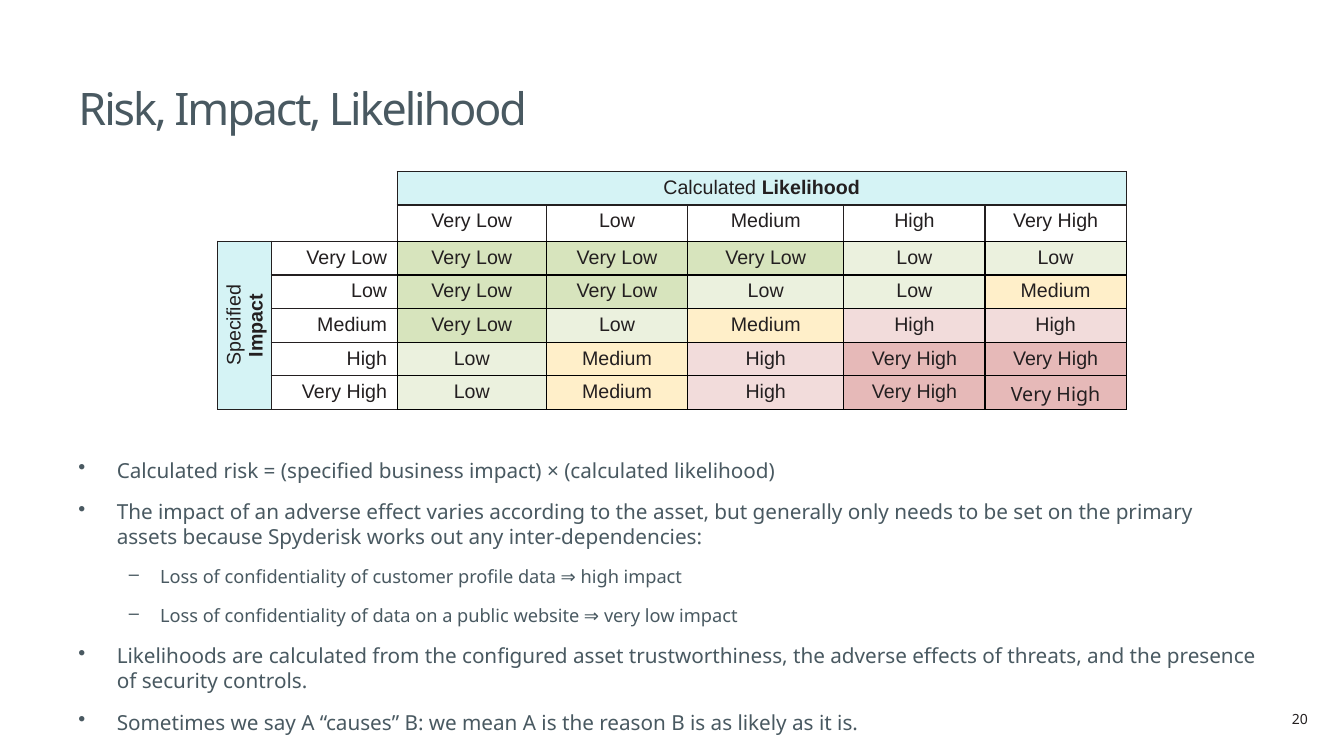
import pptx
import pptx.dml.color
import pptx.enum.text
import pptx.oxml.ns
import pptx.util
from lxml import etree

Inches = pptx.util.Inches
Pt = pptx.util.Pt
RGB = pptx.dml.color.RGBColor.from_string
ALIGN = pptx.enum.text.PP_ALIGN
ANCHOR = pptx.enum.text.MSO_ANCHOR
qn = pptx.oxml.ns.qn

THEME = {
    "sans": "Noto Sans", "grid": "Arial",
    "slate": "495961", "ink": "231F20", "line": "000000", "head": "D5F3F5",
    "risk": ["D7E4BD", "EBF1DE", "FFEFC9", "F2DCDB", "E6B9B8"],
    "title": 32, "main": 14.8, "sub": 13, "cell": 14, "page": 10,
}


def write(para, *texts, size, font=THEME["sans"], color=THEME["slate"],
          align=ALIGN.LEFT, track=0):
    """Fill a paragraph with runs; a (text,) tuple is bold."""
    para.alignment = align
    for text in texts:
        bold = isinstance(text, tuple)
        run = para.add_run()
        run.text = text[0] if bold else text
        run.font.size = Pt(size)
        run.font.name = font
        run.font.bold = bold
        run.font.color.rgb = RGB(color)
        if track:
            run.font._element.set("spc", str(track))


def edge(cell, sides, color):
    """Draw 1 pt borders on the given sides of a cell."""
    props = cell._tc.get_or_add_tcPr()
    for side in sides:
        line = etree.SubElement(props, qn("a:ln" + side), w=str(Pt(1)))
        fill = etree.SubElement(line, qn("a:solidFill"))
        etree.SubElement(fill, qn("a:srgbClr"), val=color)


deck = pptx.Presentation()
deck.slide_width = Inches(13.33)
deck.slide_height = Inches(7.5)
slide = deck.slides.add_slide(deck.slide_layouts[6])

# Title, body and page number frames
frames = {}
for name, box in {
    "title": (0.68, 0.7, 11.86, 0.63),
    "body": (0.68, 4.49, 11.88, 2.9),
    "page": (12.02, 7, 1.05, 0.27),
}.items():
    frame = slide.shapes.add_textbox(*map(Inches, box)).text_frame
    frame.word_wrap = True
    frames[name] = frame

title = frames["title"]
title.margin_top = title.margin_bottom = 0
title.vertical_anchor = ANCHOR.BOTTOM
write(title.paragraphs[0], "Risk, Impact, Likelihood", size=THEME["title"], track=-150)
write(frames["page"].paragraphs[0], "20", size=THEME["page"], color=THEME["ink"],
      align=ALIGN.RIGHT)

# Risk matrix
LEVELS = ["Very Low", "Low", "Medium", "High", "Very High"]
RISKS = [
    [0, 0, 0, 1, 1],
    [0, 0, 1, 1, 2],
    [0, 1, 2, 3, 3],
    [1, 2, 3, 4, 4],
    [1, 2, 3, 4, 4],
]
WIDTHS = [0.53, 1.25, 1.48, 1.4, 1.55, 1.4, 1.4]
HEIGHTS = [0.28, 0.36, 0.28, 0.28, 0.28, 0.28, 0.28]

table = slide.shapes.add_table(7, 7, Inches(2.16), Inches(1.7),
                               Inches(sum(WIDTHS)), Inches(sum(HEIGHTS))).table
table.first_row = table.horz_banding = False
for col, width in zip(table.columns, WIDTHS):
    col.width = Inches(width)
for row, height in zip(table.rows, HEIGHTS):
    row.height = Inches(height)

for r in range(7):
    for c in range(7):
        cell = table.cell(r, c)
        para = cell.text_frame.paragraphs[0]
        form = {"size": THEME["cell"], "font": THEME["grid"], "color": THEME["ink"]}
        corner = r < 2 and c < 2
        inner = r > 1 and c > 1
        edge(cell, "RB" if corner else "LRTB", THEME["line" if inner else "ink"])
        if inner:
            risk = RISKS[r - 2][c - 2]
            cell.fill.solid()
            cell.fill.fore_color.rgb = RGB(THEME["risk"][risk])
            if r == c == 6:
                form["font"] = THEME["sans"]
            write(para, LEVELS[risk], align=ALIGN.CENTER, **form)
        elif not corner and (r == 0 or c == 0):
            cell.fill.solid()
            cell.fill.fore_color.rgb = RGB(THEME["head"])
            if (r, c) == (0, 2):
                write(para, "Calculated ", ("Likelihood",), align=ALIGN.CENTER, **form)
            elif (r, c) == (2, 0):
                write(para, "Specified", (" Impact",), align=ALIGN.CENTER, **form)
                cell.vertical_anchor = ANCHOR.MIDDLE
                cell._tc.get_or_add_tcPr().set("vert", "vert270")
        else:
            cell.fill.background()
            if r == 1 and c > 1:
                write(para, LEVELS[c - 2], align=ALIGN.CENTER, **form)
            elif c == 1 and r > 1:
                write(para, LEVELS[r - 2], align=ALIGN.RIGHT, **form)
        if not para.runs:
            etree.SubElement(para._p, qn("a:endParaRPr"), sz=str(THEME["cell"] * 100))

for first, last in [((0, 0), (1, 1)), ((0, 2), (0, 6)), ((2, 0), (6, 0))]:
    table.cell(*first).merge(table.cell(*last))

# Bullets
POINTS = [
    (0, "Calculated risk = (specified business impact) × (calculated likelihood)"),
    (0, "The impact of an adverse effect varies according to the asset, but generally "
        "only needs to be set on the primary assets because Spyderisk works out any "
        "inter-dependencies:"),
    (1, "Loss of confidentiality of customer profile data ⇒ high impact"),
    (1, "Loss of confidentiality of data on a public website ⇒ very low impact"),
    (0, "Likelihoods are calculated from the configured asset trustworthiness, the "
        "adverse effects of threats, and the presence of security controls."),
    (0, "Sometimes we say A “causes” B: we mean A is the reason B is as likely as it is."),
]
STYLES = [("•", 0.38, 0.38, THEME["main"]), ("–", 0.81, 0.31, THEME["sub"])]

body = frames["body"]
for i, (level, text) in enumerate(POINTS):
    mark, left, hang, size = STYLES[level]
    para = body.add_paragraph() if i else body.paragraphs[0]
    props = para._p.get_or_add_pPr()
    props.set("marL", str(Inches(left)))
    props.set("indent", str(-Inches(hang)))
    etree.SubElement(props, qn("a:buChar"), char=mark)
    para.level = level
    para.space_after = Pt(12)
    write(para, text, size=size)

deck.save("out.pptx")
